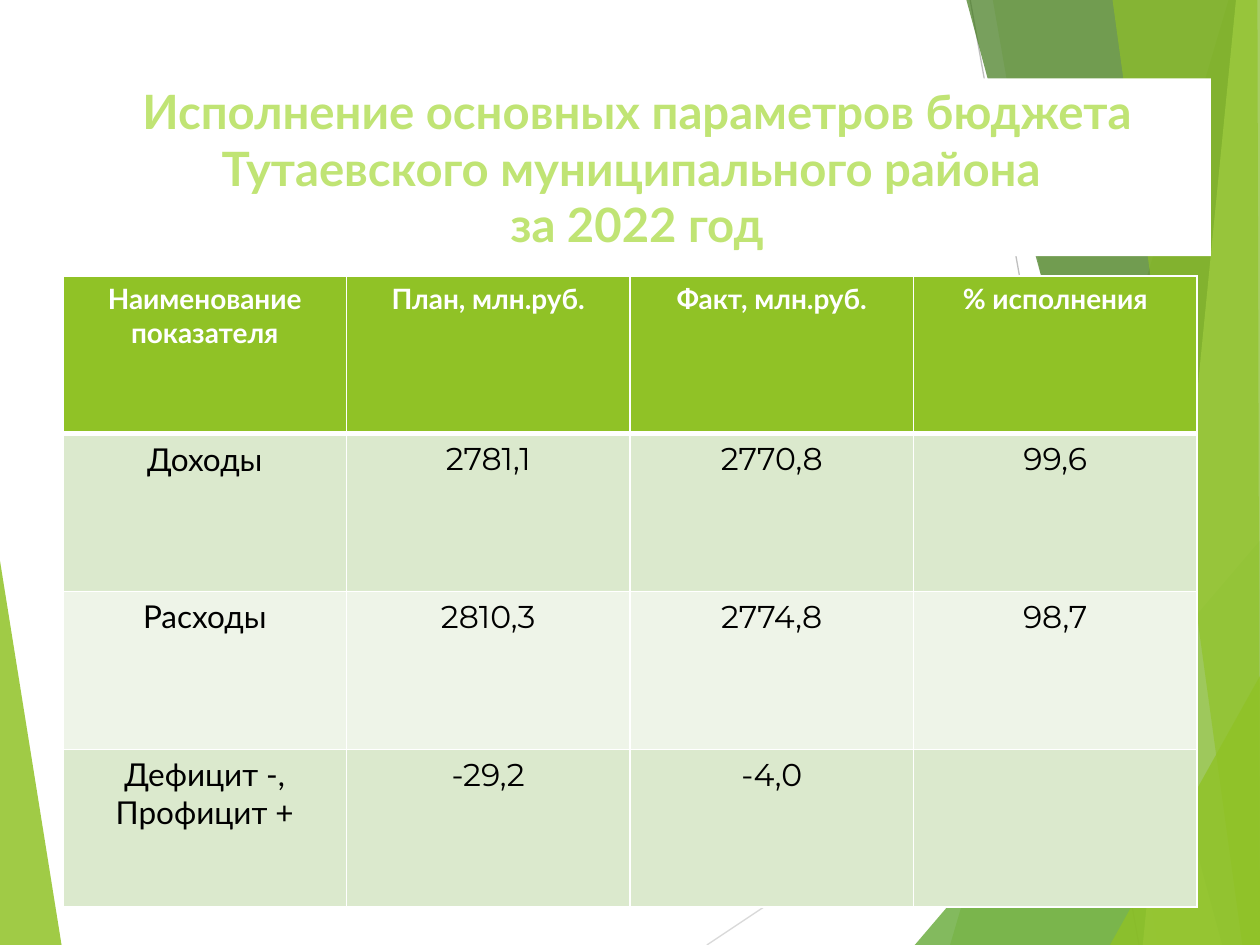
from typing import NamedTuple

from lxml.etree import SubElement as Sub
from pptx import Presentation
from pptx.dml.color import RGBColor
from pptx.enum.shapes import MSO_CONNECTOR as Link
from pptx.enum.text import MSO_ANCHOR as Anchor, MSO_AUTO_SIZE as Fit, PP_ALIGN as Align
from pptx.oxml.ns import qn
from pptx.util import Inches, Pt

WIDE, HIGH = Inches(10), Inches(7.5)

WHITE = RGBColor(0xFF, 0xFF, 0xFF)
BLACK = RGBColor(0, 0, 0)
GREEN = RGBColor(0x90, 0xC2, 0x26)
LEAF = RGBColor(0x54, 0xA0, 0x21)
DARK = RGBColor(0x3F, 0x78, 0x19)
LIME = RGBColor(0xC0, 0xE4, 0x74)
PALE = RGBColor(0xDB, 0xE9, 0xCD)
MIST = RGBColor(0xEE, 0xF4, 0xE8)
GRAY = RGBColor(0xBF, 0xBF, 0xBF)
SILVER = RGBColor(0xD9, 0xD9, 0xD9)


class Facet(NamedTuple):
    """Polygon with corners in percent of the slide's width and height."""
    spots: list[tuple[float, float]]
    color: RGBColor
    alpha: int


class Ray(NamedTuple):
    """Thin line with ends in percent of the slide's width and height."""
    start: tuple[float, float]
    end: tuple[float, float]
    color: RGBColor


DECOR = [
    Facet([(-0.1, 58.5), (4.9, 100.1), (-0.1, 100)], GREEN, 85),
    Ray((56.1, 100), (100.1, 60.9), SILVER),
    Ray((77, 0), (90.4, 100), GRAY),
    Facet([(97.5, 0), (75.4, 100), (100.2, 100.1), (100.1, 0)], GREEN, 30),
    Facet([(78.8, 0), (91.9, 100), (100.1, 100), (100.1, 0)], GREEN, 20),
    Facet([(72.6, 100), (100, 57.2), (100.1, 100)], LEAF, 72),
    Facet([(76.7, 0), (97, 100), (100.1, 100), (100.1, 0)], DARK, 70),
    Facet([(98.1, 0), (90.7, 100), (100.1, 100), (100, 0)], LIME, 70),
    Facet([(88.3, 0), (98.6, 100), (100, 100), (99.8, 0)], GREEN, 65),
    Facet([(88.1, 100), (100.1, 71.3), (100.1, 100)], GREEN, 80),
]

TITLE = "Исполнение основных параметров бюджета Тутаевского муниципального района \vза 2022 год"
ROWS = [
    ["Наименование показателя", "План, млн.руб.", "Факт, млн.руб.", "% исполнения"],
    ["Доходы", "2781,1", "2770,8", "99,6"],
    ["Расходы", "2810,3", "2774,8", "98,7"],
    ["Дефицит -,\nПрофицит +", "-29,2", "-4,0", ""],
]


def across(share: float) -> int:
    return round(WIDE * share / 100)


def down(share: float) -> int:
    return round(HIGH * share / 100)


def place(shape, left: float, top: float, width: float, height: float) -> None:
    shape.left, shape.top = across(left), down(top)
    shape.width, shape.height = across(width), down(height)


def write(frame, text: str, *, size: float, color: RGBColor,
          font: str = "Lato", bold: bool = False) -> None:
    frame.text = text
    for para in frame.paragraphs:
        para.alignment = Align.CENTER
        for run in para.runs:
            run.font.size, run.font.name, run.font.bold = Pt(size), font, bold
            run.font.color.rgb = color


def draw_facet(shapes, facet: Facet) -> None:
    spots = [(across(x), down(y)) for x, y in facet.spots]
    pen = shapes.build_freeform(*spots[0])
    pen.add_line_segments(spots[1:], close=True)
    shape = pen.convert_to_shape()
    shape.shadow.inherit = False
    shape.line.fill.background()
    shape.fill.solid()
    shape.fill.fore_color.rgb = facet.color
    tint = shape.element.spPr.find(qn("a:solidFill"))[0]
    Sub(tint, qn("a:alpha"), val=str(facet.alpha * 1000))


def draw_ray(shapes, ray: Ray) -> None:
    (x1, y1), (x2, y2) = ray.start, ray.end
    line = shapes.add_connector(Link.STRAIGHT, across(x1), down(y1), across(x2), down(y2))
    line.line.color.rgb = ray.color
    line.line.width = Pt(0.75)
    Sub(line.element.spPr, qn("a:effectLst"))


def edge(cell, **widths: float) -> None:
    """Draw white borders; widths are points by side: L, R, T, B."""
    props = cell._tc.get_or_add_tcPr()
    for side, width in widths.items():
        line = Sub(props, qn(f"a:ln{side}"), w=str(Pt(width)))
        Sub(Sub(line, qn("a:solidFill")), qn("a:srgbClr"), val=str(WHITE))


def draw_table(shapes, rows: list[list[str]]) -> None:
    count = len(rows), len(rows[0])
    table = shapes.add_table(*count, across(5), down(29.2), across(90), down(66.8)).table
    for r, row in enumerate(rows):
        head = r == 0
        for c, text in enumerate(row):
            cell = table.cell(r, c)
            edge(cell, L=1, R=1, T=3 if r == 1 else 1, B=3 if head else 1)
            cell.fill.solid()
            cell.fill.fore_color.rgb = GREEN if head else PALE if r % 2 else MIST
            cell.margin_left = cell.margin_right = Inches(0.11)
            write(cell.text_frame, text, size=16 if head else 18,
                  color=WHITE if head else BLACK, bold=head,
                  font="Lato" if head or c == 0 else "Montserrat")


def main() -> None:
    deck = Presentation()
    deck.slide_width, deck.slide_height = WIDE, HIGH
    slide = deck.slides.add_slide(deck.slide_layouts[5])
    shapes = slide.shapes

    for part in DECOR:
        if isinstance(part, Facet):
            draw_facet(shapes, part)
        else:
            draw_ray(shapes, part)

    title = shapes.title
    title.element.getparent().append(title.element)  # in front of the facets
    place(title, 5, 8.3, 91.1, 18.8)
    title.fill.solid()
    title.fill.fore_color.rgb = WHITE
    frame = title.text_frame
    frame.word_wrap, frame.auto_size = True, Fit.NONE
    frame.vertical_anchor = Anchor.MIDDLE
    write(frame, TITLE, size=27, color=LIME, bold=True)

    draw_table(shapes, ROWS)
    deck.save("out.pptx")


if __name__ == "__main__":
    main()
